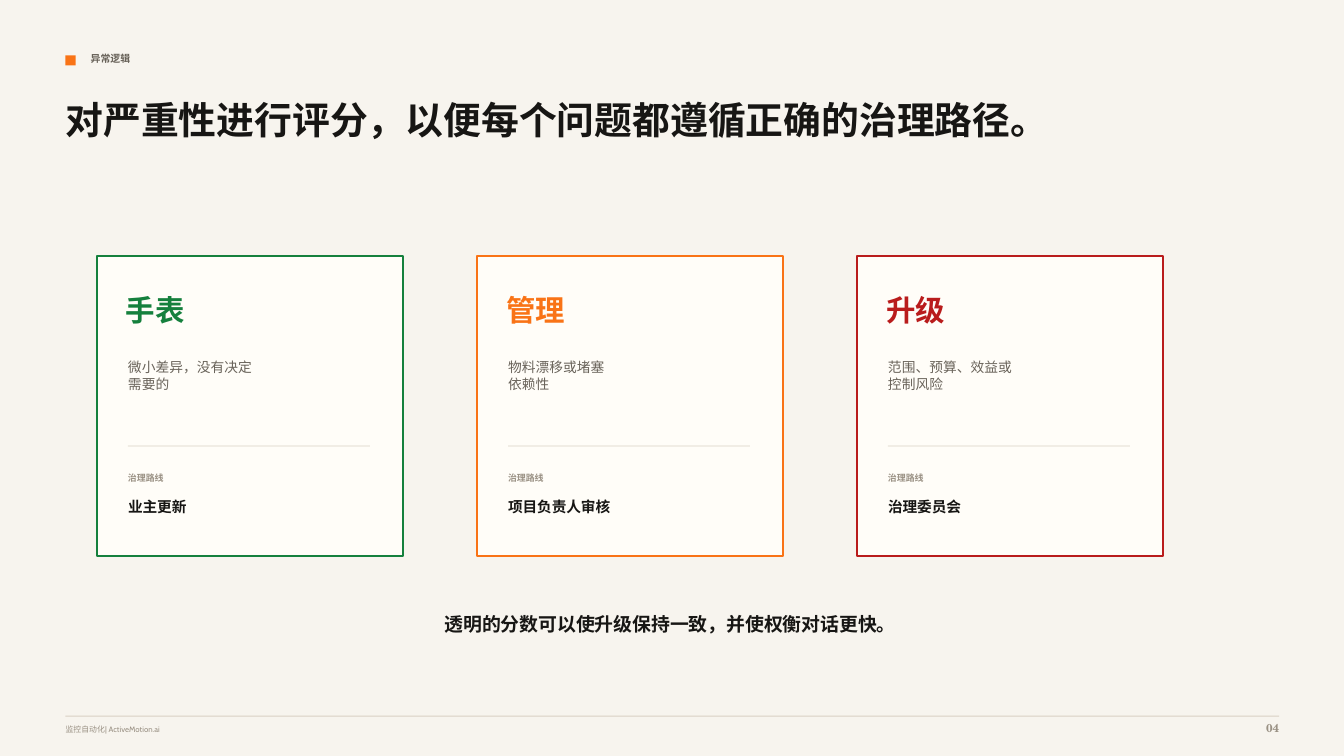
import pptx
import pptx.dml.color
import pptx.enum.shapes
import pptx.enum.text
import pptx.util

SECTION = "异常逻辑"
TITLE = "对严重性进行评分，以便每个问题都遵循正确的治理路径。"
ROUTE_LABEL = "治理路线"
SEVERITIES = [
    {"level": "手表", "criteria": "微小差异，没有决定\n需要的", "route": "业主更新", "color": "15803D"},
    {"level": "管理", "criteria": "物料漂移或堵塞\n依赖性", "route": "项目负责人审核", "color": "F97316"},
    {"level": "升级", "criteria": "范围、预算、效益或\n控制风险", "route": "治理委员会", "color": "B91C1C"},
]
TAKEAWAY = "透明的分数可以使升级保持一致，并使权衡对话更快。"
FOOTER = "监控自动化| ActiveMotion.ai"
PAGE_NUMBER = "04"

THEME = {
    "background": "F7F4EE", "card": "FFFDF8", "accent": "F97316",
    "ink": "171614", "muted": "69635A", "faint": "9A9184", "rule": "D9D0C3",
    "display": "TeX Gyre Schola", "body": "Cabin",
    "title_size": 27, "level_size": 21, "takeaway_size": 13.5, "route_size": 10.5,
    "criteria_size": 9.8, "page_size": 8.2, "section_size": 7.1,
    "label_size": 6.4, "footer_size": 5.6,
}

SLIDE_WIDTH, SLIDE_HEIGHT = 960, 540
MARGIN = 46.8
CONTENT_WIDTH = 866.88
RULE_HEIGHT = 0.72
CARD_LEFT, CARD_TOP, CARD_WIDTH, CARD_HEIGHT = 69.12, 182.88, 218.88, 214.56
CARD_PITCH = 271.44
CARD_INSET = 22.32

Pt = pptx.util.Pt
ALIGN = pptx.enum.text.PP_ALIGN


def rgb(color):
    return pptx.dml.color.RGBColor.from_string(color)


def add_rect(slide, left, top, width, height, fill, outline=None):
    rect = slide.shapes.add_shape(
        pptx.enum.shapes.MSO_SHAPE.RECTANGLE, Pt(left), Pt(top), Pt(width), Pt(height))
    rect.shadow.inherit = False
    rect.fill.solid()
    rect.fill.fore_color.rgb = rgb(fill)
    if outline:
        rect.line.color.rgb = rgb(outline)
        rect.line.width = Pt(1.5)
    else:
        rect.line.fill.background()


def add_text(slide, text, left, top, width, height, role, color,
             font="body", bold=True, align=ALIGN.LEFT):
    """Add a text box without insets; role picks the type size."""
    frame = slide.shapes.add_textbox(Pt(left), Pt(top), Pt(width), Pt(height)).text_frame
    frame.word_wrap = True
    frame.margin_left = frame.margin_right = frame.margin_top = frame.margin_bottom = 0
    frame.text = text
    for paragraph in frame.paragraphs:
        paragraph.alignment = align
        for run in paragraph.runs:
            run.font.name = THEME[font]
            run.font.size = Pt(THEME[role + "_size"])
            run.font.bold = bold
            run.font.color.rgb = rgb(color)


def add_header(slide):
    add_rect(slide, MARGIN, 39.6, 7.2, 7.2, THEME["accent"])
    add_text(slide, SECTION, 64.8, 37.44, 390.24, 13.68, "section", THEME["muted"])
    add_text(slide, TITLE, MARGIN, 69.12, 675.36, 73.44, "title", THEME["ink"], "display")


def add_severity_card(slide, severity, left):
    inner = left + CARD_INSET
    add_rect(slide, left, CARD_TOP, CARD_WIDTH, CARD_HEIGHT, THEME["card"], severity["color"])
    add_text(slide, severity["level"], inner - 1.44, CARD_TOP + 25.92, 164.88, 25.2,
             "level", severity["color"], "display")
    add_text(slide, severity["criteria"], inner, CARD_TOP + 73.44, 167.76, 37.44,
             "criteria", THEME["muted"], bold=False)
    add_rect(slide, inner, CARD_TOP + 135.36, 172.8, RULE_HEIGHT, THEME["rule"])
    add_text(slide, ROUTE_LABEL, inner, CARD_TOP + 154.8, 120.24, 10.8,
             "label", THEME["faint"])
    add_text(slide, severity["route"], inner, CARD_TOP + 172.8, 164.88, 16.56,
             "route", THEME["ink"])


def add_footer(slide):
    add_rect(slide, MARGIN, 511.2, CONTENT_WIDTH, RULE_HEIGHT, THEME["rule"])
    add_text(slide, FOOTER, MARGIN, 517.68, 570.24, 10.8, "footer", THEME["faint"], bold=False)
    add_text(slide, PAGE_NUMBER, MARGIN + CONTENT_WIDTH - 36, 514.8, 36, 13.68,
             "page", THEME["faint"], "display", align=ALIGN.RIGHT)


def main():
    deck = pptx.Presentation()
    deck.slide_width, deck.slide_height = Pt(SLIDE_WIDTH), Pt(SLIDE_HEIGHT)
    slide = deck.slides.add_slide(deck.slide_layouts[6])
    slide.background.fill.solid()
    slide.background.fill.fore_color.rgb = rgb(THEME["background"])

    add_header(slide)
    for index, severity in enumerate(SEVERITIES):
        add_severity_card(slide, severity, CARD_LEFT + index * CARD_PITCH)
    add_text(slide, TAKEAWAY, 118.8, 437.76, 720, 20.88, "takeaway", THEME["ink"],
             "display", align=ALIGN.CENTER)
    add_footer(slide)
    deck.save("out.pptx")


if __name__ == "__main__":
    main()
